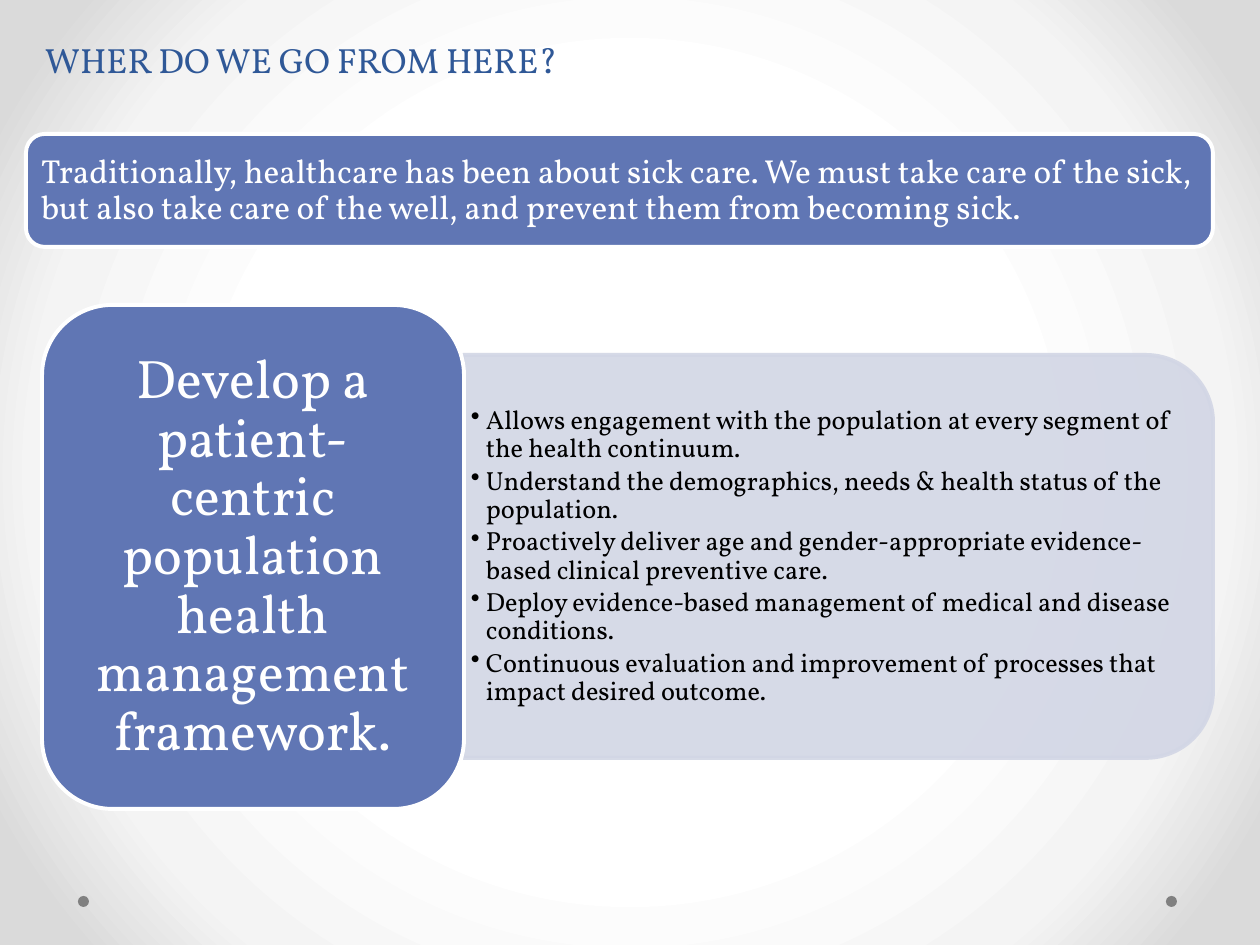
from lxml.etree import SubElement
from pptx import Presentation
from pptx.dml.color import RGBColor
from pptx.enum.shapes import MSO_SHAPE
from pptx.enum.text import MSO_ANCHOR, MSO_AUTO_SIZE, PP_ALIGN
from pptx.oxml import parse_xml
from pptx.oxml.ns import nsdecls, qn
from pptx.util import Emu, Pt

EMU_PER_PX = 914400 / 126
FONT = "Vollkorn"
WHITE = RGBColor(0xFF, 0xFF, 0xFF)
BLACK = RGBColor(0x00, 0x00, 0x00)
BLUE = RGBColor(0x60, 0x76, 0xB4)
NAVY = RGBColor(0x2F, 0x58, 0x97)
LAVENDER = RGBColor(0xD2, 0xD6, 0xE5)
GRAY = RGBColor(0x80, 0x80, 0x80)
BACKGROUND_STOPS = (
    (50, WHITE),
    (76, RGBColor(0xF4, 0xF4, 0xF4)),
    (92, RGBColor(0xDA, 0xDA, 0xDA)),
)
BENEFITS = (
    "Allows engagement with the population at every segment of the health continuum.",
    "Understand the demographics, needs & health status of the population.",
    "Proactively deliver age and gender-appropriate evidence-based clinical preventive care.",
    "Deploy evidence-based management of medical and disease conditions.",
    "Continuous evaluation and improvement of processes that impact desired outcome.",
)


def px(value):
    return Emu(round(value * EMU_PER_PX))


def add_filled_shape(slide, kind, box, fill, line=None):
    shape = slide.shapes.add_shape(kind, *map(px, box))
    shape.shadow.inherit = False
    shape.fill.solid()
    shape.fill.fore_color.rgb = fill
    if line is None:
        shape.line.fill.background()
    else:
        shape.line.color.rgb = line
        shape.line.width = Pt(2.25)
    return shape


def add_text(slide, box, lines, size, color, insets, spacing=0.9,
             anchor=MSO_ANCHOR.MIDDLE, alignment=PP_ALIGN.LEFT):
    text_frame = slide.shapes.add_textbox(*map(px, box)).text_frame
    text_frame.word_wrap = True
    text_frame.vertical_anchor = anchor
    text_frame.margin_left = text_frame.margin_right = px(insets[0])
    text_frame.margin_top = text_frame.margin_bottom = px(insets[1])
    text_frame.text = "\n".join(lines)
    for paragraph in text_frame.paragraphs:
        paragraph.alignment = alignment
        paragraph.line_spacing = spacing
        for run in paragraph.runs:
            run.font.name = FONT
            run.font.size = Pt(size)
            run.font.color.rgb = color
    return text_frame


def set_alpha(shape, percent):
    for color in shape.element.spPr.iter(qn("a:srgbClr")):
        SubElement(color, qn("a:alpha"), val=str(percent * 1000))


def add_bullet(paragraph):
    paragraph.level = 1
    paragraph.space_after = Pt(2.25)
    properties = paragraph._p.get_or_add_pPr()
    properties.set("marL", str(px(15)))
    properties.set("indent", str(px(-15)))
    SubElement(properties, qn("a:buChar"), char="•")


def paint_background(slide):
    slide.background.fill.solid()
    properties = slide.element.cSld.bg.bgPr
    stops = "".join(
        f'<a:gs pos="{position * 1000}"><a:srgbClr val="{color}"/></a:gs>'
        for position, color in BACKGROUND_STOPS
    )
    gradient = parse_xml(
        f'<a:gradFill {nsdecls("a")} rotWithShape="1"><a:gsLst>{stops}</a:gsLst>'
        '<a:path path="circle"><a:fillToRect l="50000" t="50000" r="50000" b="50000"/>'
        "</a:path></a:gradFill>"
    )
    properties.replace(properties.find(qn("a:solidFill")), gradient)


def add_footer_dots(slide, left, top, width, size):
    for dot_left in (left + width - size, left):
        add_filled_shape(slide, MSO_SHAPE.OVAL, (dot_left, top, size, size), GRAY)


def add_title(slide, box):
    text_frame = add_text(slide, box, ["WHER DO WE GO FROM HERE?"], 20, NAVY,
                          (13, 6), spacing=1.0, anchor=MSO_ANCHOR.TOP)
    text_frame.auto_size = MSO_AUTO_SIZE.SHAPE_TO_FIT_TEXT


def add_banner(slide, left, top, width, height):
    add_filled_shape(slide, MSO_SHAPE.ROUNDED_RECTANGLE,
                     (left, top, width, height), BLUE, WHITE)
    add_text(slide, (left + 5, top + 5, width - 10, height - 10),
             ["Traditionally, healthcare has been about sick care. We must take care of "
              "the sick, but also take care of the well, and prevent them from becoming sick."],
             19, WHITE, (10, 10))


def add_benefits_panel(slide, left, top, width, height):
    offset = (width - height) / 2
    panel = add_filled_shape(slide, MSO_SHAPE.ROUND_2_SAME_RECTANGLE,
                             (left + offset, top - offset, height, width),
                             LAVENDER, LAVENDER)
    panel.rotation = 90
    set_alpha(panel, 90)
    text_frame = add_text(slide, (left, top + 20, width - 20, height - 40),
                          BENEFITS, 15, BLACK, (8, 4))
    for paragraph in text_frame.paragraphs:
        add_bullet(paragraph)


def add_framework_card(slide, left, top, width, height):
    add_filled_shape(slide, MSO_SHAPE.ROUNDED_RECTANGLE,
                     (left, top, width, height), BLUE, WHITE)
    add_text(slide, (left + 21, top + 21, width - 42, height - 42),
             ["Develop a patient-centric population health management framework."],
             31, WHITE, (16, 8), alignment=PP_ALIGN.CENTER)


def main():
    presentation = Presentation()
    presentation.slide_width = px(1260)
    presentation.slide_height = px(945)
    slide = presentation.slides.add_slide(presentation.slide_layouts[6])
    paint_background(slide)
    add_footer_dots(slide, 78, 896, 1099, 11)
    add_title(slide, (32, 32, 1061, 55))
    add_banner(slide, 26, 134, 1187, 113)
    add_benefits_panel(slide, 463, 355, 750, 403)
    add_framework_card(slide, 42, 305, 422, 504)
    presentation.save("out.pptx")


if __name__ == "__main__":
    main()
